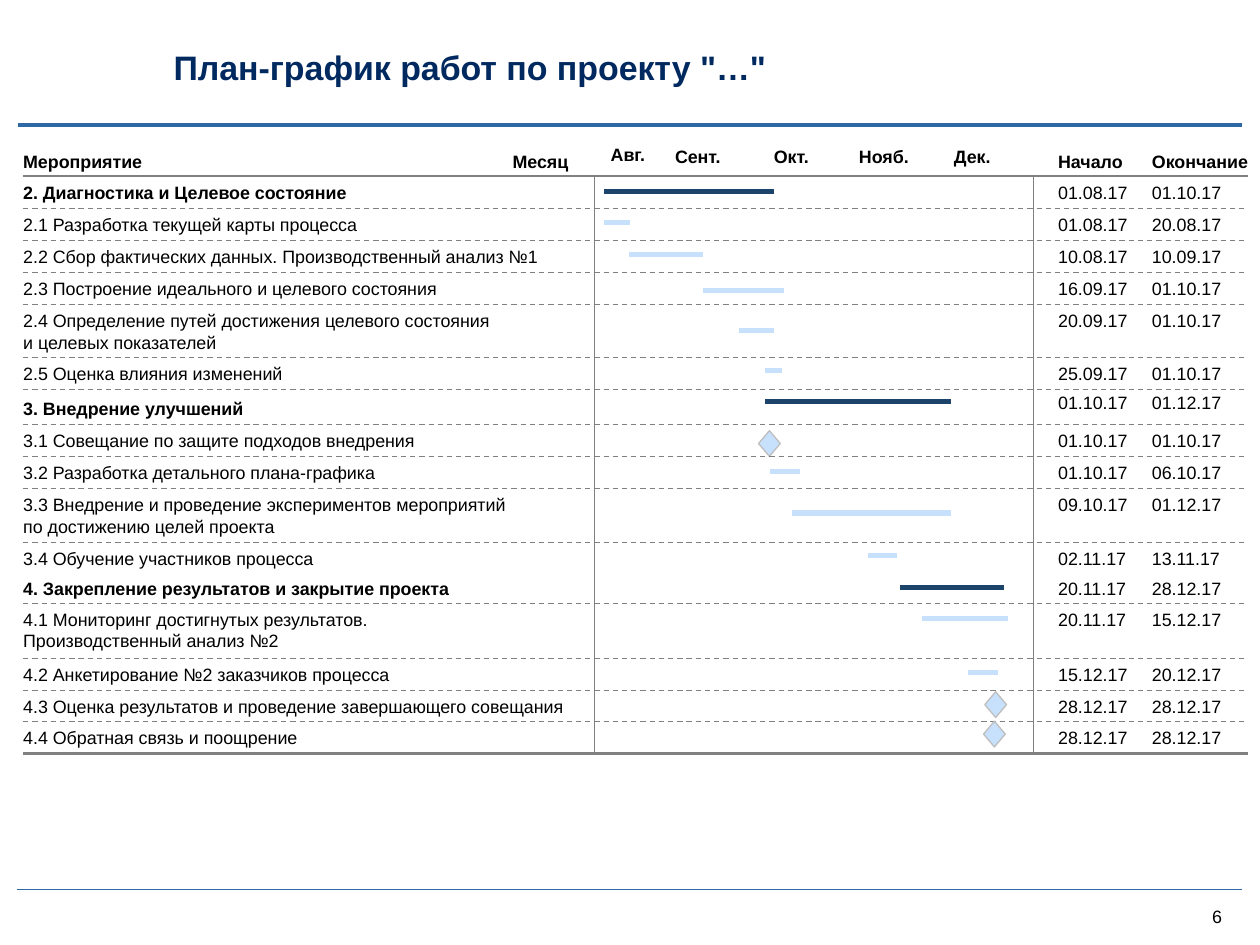
"""Build the project schedule slide with a Gantt chart."""
from typing import NamedTuple

from pptx import Presentation
from pptx.dml.color import RGBColor
from pptx.enum.dml import MSO_LINE
from pptx.enum.shapes import MSO_CONNECTOR, MSO_SHAPE
from pptx.enum.text import MSO_ANCHOR, PP_ALIGN
from pptx.oxml.ns import qn
from pptx.util import Pt

BLACK = RGBColor(0x00, 0x00, 0x00)
TITLE_BLUE = RGBColor(0x00, 0x29, 0x60)
RULE_BLUE = RGBColor(0x2E, 0x69, 0xA5)
STAGE_BLUE = RGBColor(0x1C, 0x43, 0x6A)
TASK_BLUE = RGBColor(0xC7, 0xE0, 0xFB)
GRID_GRAY = RGBColor(0x80, 0x80, 0x80)
DIAMOND_GRAY = RGBColor(0xBF, 0xBF, 0xBF)

TABLE_LEFT, TABLE_RIGHT = 13, 699.1
TABLE_TOP, TABLE_BOTTOM = 98.6, 421.9
START_LEFT, FINISH_LEFT = 592.6, 645.1
LABEL_WIDTH, DATE_WIDTH = 310, 50
TEXT_GAP, TEXT_HEIGHT = 2.9, 12
DIAMOND_WIDTH, DIAMOND_HEIGHT = 12.2, 14.4

MONTHS = [("Авг.", 342, 77.8), ("Сент.", 378, 79.2), ("Окт.", 433.4, 79.2),
          ("Нояб.", 481, 79.2), ("Дек.", 534.2, 79.2)]


class Work(NamedTuple):
    """One row of the schedule; a milestone has equal bar ends."""

    top: float
    label: str
    start: str
    finish: str
    bar_left: float
    bar_right: float
    bar_y: float
    is_stage: bool = False
    label_shift: float = 0
    date_shift: float = 0
    has_rule: bool = True


WORKS = [
    Work(98.6, "2. Диагностика и Целевое состояние", "01.08.17", "01.10.17",
         338.4, 433.4, 107.3, is_stage=True, has_rule=False),
    Work(116.6, "2.1 Разработка текущей карты процесса", "01.08.17", "20.08.17",
         338.4, 352.8, 124.6),
    Work(134.6, "2.2 Сбор фактических данных. Производственный анализ №1",
         "10.08.17", "10.09.17", 352.1, 393.8, 142.6),
    Work(152.6, "2.3 Построение идеального и целевого состояния",
         "16.09.17", "01.10.17", 393.8, 439.2, 162.7),
    Work(170.6, "2.4 Определение путей достижения целевого состояния\n"
         "и целевых показателей", "20.09.17", "01.10.17", 414, 433.4, 185),
    Work(200.2, "2.5 Оценка влияния изменений", "25.09.17", "01.10.17",
         428.4, 437.8, 207.4),
    Work(218.2, "3. Внедрение улучшений", "01.10.17", "01.12.17",
         428.4, 532.8, 225, is_stage=True, label_shift=1.4, date_shift=-1.5),
    Work(237.6, "3.1 Совещание по защите подходов внедрения",
         "01.10.17", "01.10.17", 430.9, 430.9, 248.4),
    Work(255.6, "3.2 Разработка детального плана-графика",
         "01.10.17", "06.10.17", 431.3, 447.8, 264.2),
    Work(273.6, "3.3 Внедрение и проведение экспериментов мероприятий\n"
         "по достижению целей проекта", "09.10.17", "01.12.17", 443.5, 532.8, 287.3),
    Work(303.8, "3.4 Обучение участников процесса", "02.11.17", "13.11.17",
         486, 502.6, 311),
    Work(320.4, "4. Закрепление результатов и закрытие проекта",
         "20.11.17", "28.12.17", 504, 562.3, 329, is_stage=True, has_rule=False),
    Work(337.9, "4.1 Мониторинг достигнутых результатов.\n"
         "Производственный анализ №2", "20.11.17", "15.12.17", 516.2, 564.5, 346.3),
    Work(368.6, "4.2 Анкетирование №2 заказчиков процесса",
         "15.12.17", "20.12.17", 542.2, 558.7, 376.6),
    Work(386.6, "4.3 Оценка результатов и проведение завершающего совещания",
         "28.12.17", "28.12.17", 557.6, 557.6, 394.6),
    Work(404.2, "4.4 Обратная связь и поощрение", "28.12.17", "28.12.17",
         556.9, 556.9, 411.1),
]


def add_text(slide, text, left, top, width, height=TEXT_HEIGHT, size=10, bold=False,
             color=BLACK, align=PP_ALIGN.LEFT, anchor=MSO_ANCHOR.TOP):
    """Add a text box without margins, one paragraph per line of text."""
    shape = slide.shapes.add_textbox(Pt(left), Pt(top), Pt(width), Pt(height))
    frame = shape.text_frame
    frame.word_wrap = True
    frame.vertical_anchor = anchor
    frame.margin_left = frame.margin_right = frame.margin_top = frame.margin_bottom = 0
    for index, line in enumerate(text.split("\n")):
        paragraph = frame.add_paragraph() if index else frame.paragraphs[0]
        paragraph.alignment = align
        run = paragraph.add_run()
        run.text = line
        run.font.name = "Arial"
        run.font.size = Pt(size)
        run.font.bold = bold
        run.font.color.rgb = color


def add_line(slide, left, top, right, bottom, color, width, dashed=False):
    """Add a straight line without a shadow."""
    line = slide.shapes.add_connector(
        MSO_CONNECTOR.STRAIGHT, Pt(left), Pt(top), Pt(right), Pt(bottom))
    line.line.color.rgb = color
    line.line.width = Pt(width)
    if dashed:
        line.line.dash_style = MSO_LINE.DASH
    properties = line._element.spPr
    properties.append(properties.makeelement(qn("a:effectLst"), {}))


def add_milestone(slide, center_x, center_y):
    """Add a milestone diamond around a point."""
    shape = slide.shapes.add_shape(
        MSO_SHAPE.FLOWCHART_DECISION,
        Pt(center_x - DIAMOND_WIDTH / 2), Pt(center_y - DIAMOND_HEIGHT / 2),
        Pt(DIAMOND_WIDTH), Pt(DIAMOND_HEIGHT))
    shape.shadow.inherit = False
    shape.fill.solid()
    shape.fill.fore_color.rgb = TASK_BLUE
    shape.line.color.rgb = DIAMOND_GRAY
    shape.line.width = Pt(0.75)


def add_header(slide):
    """Add the column headings and the month names."""
    for text, left, width, align in [
            ("Мероприятие", TABLE_LEFT, 100, PP_ALIGN.LEFT),
            ("Месяц", 268.2, 50, PP_ALIGN.RIGHT),
            ("Начало", START_LEFT, DATE_WIDTH, PP_ALIGN.LEFT),
            ("Окончание", FINISH_LEFT, 60, PP_ALIGN.LEFT)]:
        add_text(slide, text, left, 84.4, width, bold=True, align=align,
                 anchor=MSO_ANCHOR.BOTTOM)
    for month, left, top in MONTHS:
        add_text(slide, month, left, top, 40, 17.3, bold=True, anchor=MSO_ANCHOR.MIDDLE)


def add_grid(slide):
    """Add the column dividers and the rules that bound the table."""
    for x in (332.9, 578.9):
        add_line(slide, x, TABLE_TOP, x, TABLE_BOTTOM, GRID_GRAY, 0.75)
    for y in (TABLE_TOP, TABLE_BOTTOM):
        add_line(slide, TABLE_LEFT, y, TABLE_RIGHT, y, GRID_GRAY, 1.5)


def add_work(slide, work):
    """Add a row with its rule, label, dates and bar or milestone."""
    if work.has_rule:
        add_line(slide, TABLE_LEFT, work.top, TABLE_RIGHT, work.top, GRID_GRAY, 0.75,
                 dashed=True)
    text_top = work.top + TEXT_GAP
    add_text(slide, work.label, TABLE_LEFT, text_top + work.label_shift, LABEL_WIDTH,
             TEXT_HEIGHT * len(work.label.split("\n")), bold=work.is_stage)
    for date, left in ((work.start, START_LEFT), (work.finish, FINISH_LEFT)):
        add_text(slide, date, left, text_top + work.date_shift, DATE_WIDTH)
    if work.bar_left == work.bar_right:
        add_milestone(slide, work.bar_left, work.bar_y)
    else:
        add_line(slide, work.bar_left, work.bar_y, work.bar_right, work.bar_y,
                 STAGE_BLUE if work.is_stage else TASK_BLUE, 3)


def main():
    """Build and save the slide."""
    presentation = Presentation()
    presentation.slide_width = Pt(705.6)
    presentation.slide_height = Pt(529.2)
    slide = presentation.slides.add_slide(presentation.slide_layouts[6])
    add_line(slide, 9.4, 498.2, 695.5, 498.2, RULE_BLUE, 0.75)
    add_line(slide, 10.1, 69.8, 695.5, 69.8, RULE_BLUE, 2.25)
    add_text(slide, "План-график работ по проекту \"…\"", 97.2, 25.9, 526.3, 23,
             size=19, bold=True, color=TITLE_BLUE, anchor=MSO_ANCHOR.MIDDLE)
    add_header(slide)
    add_grid(slide)
    for work in WORKS:
        add_work(slide, work)
    add_text(slide, "6", 673.2, 506.9, 16.6, align=PP_ALIGN.CENTER,
             anchor=MSO_ANCHOR.MIDDLE)
    presentation.save("out.pptx")


if __name__ == "__main__":
    main()
